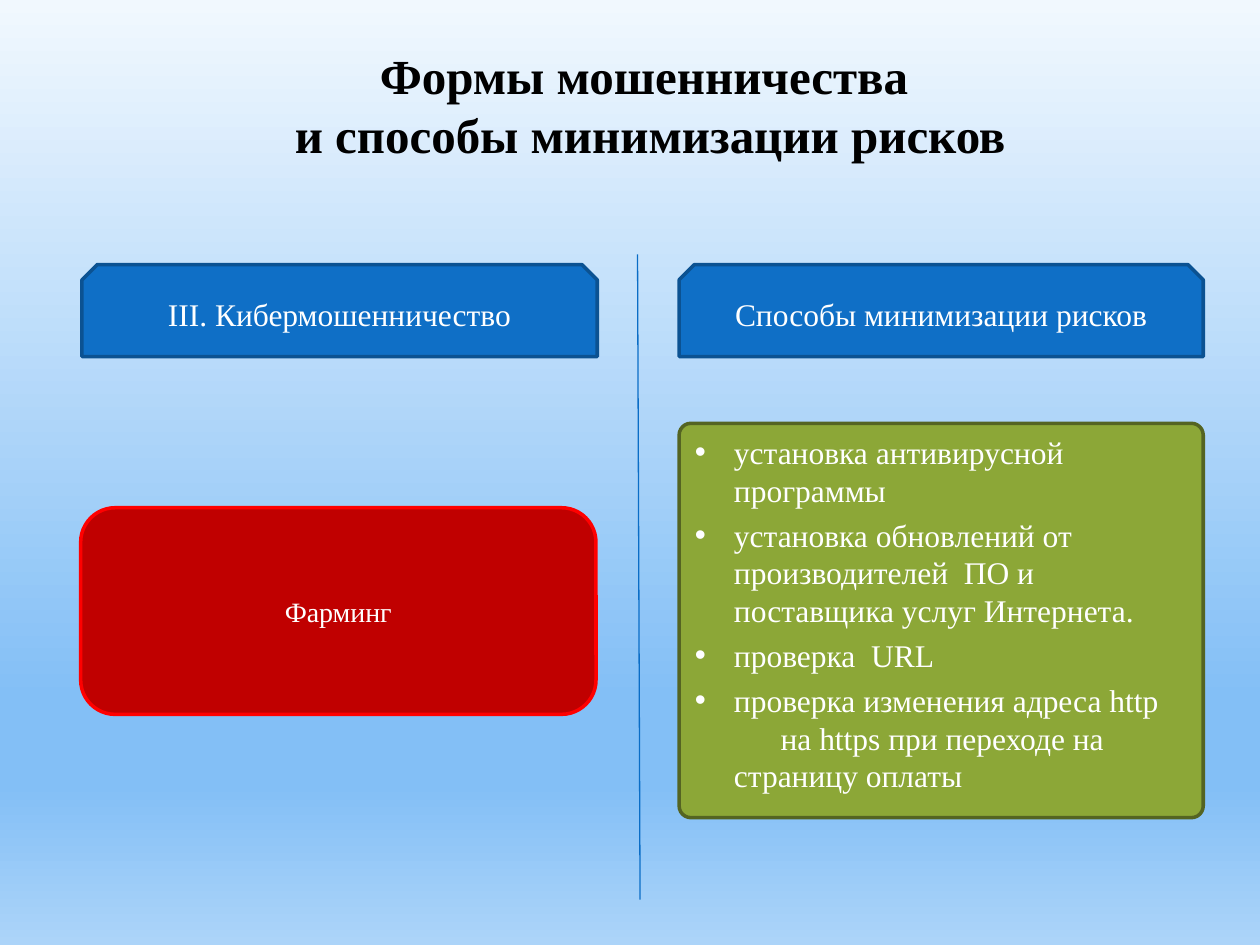
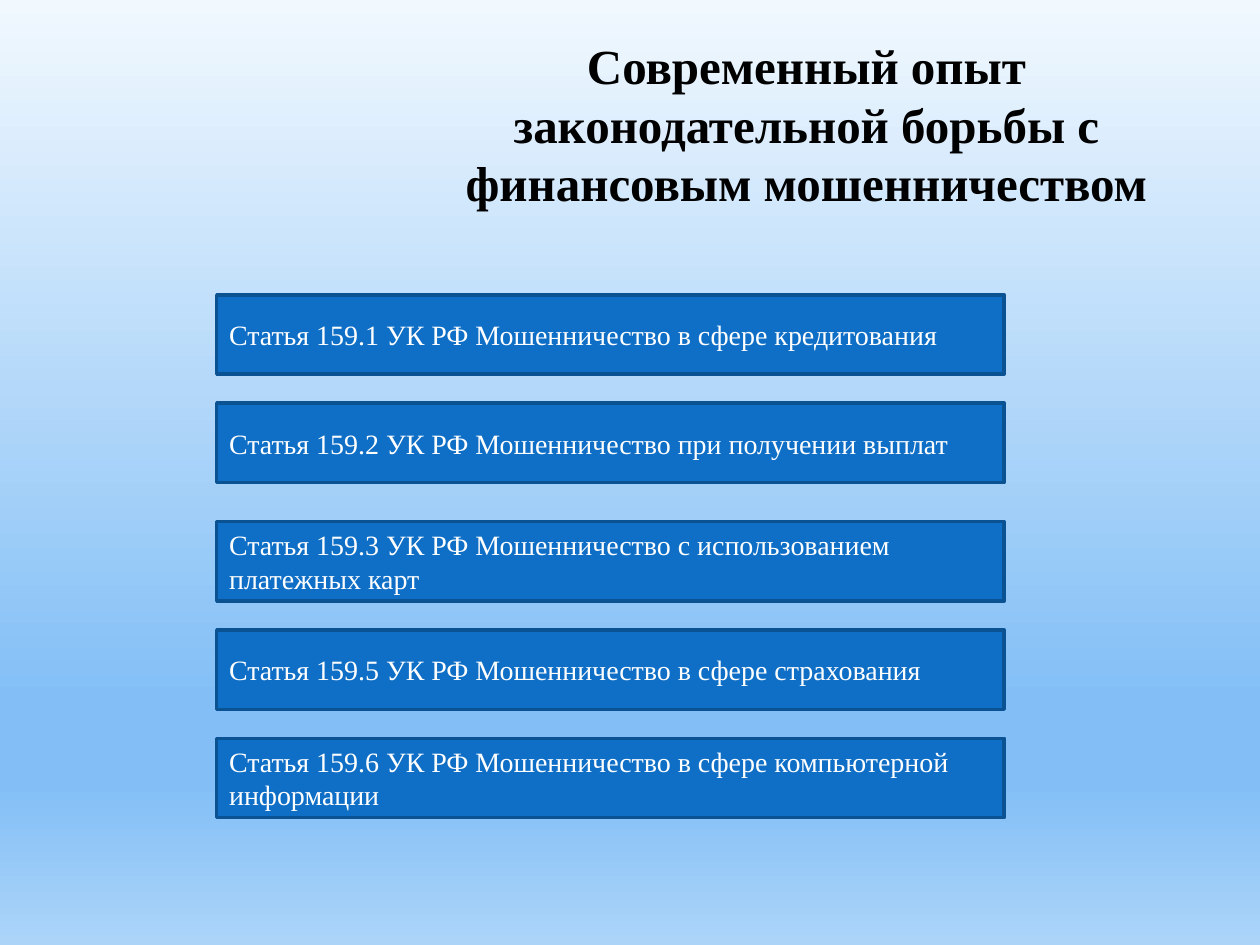
from lxml import etree
from pptx import Presentation
from pptx import util as u
from pptx.dml.color import RGBColor
from pptx.enum import shapes, text
from pptx.oxml.ns import qn

FORMS_TITLE = "Формы мошенничества \vи способы минимизации рисков"
HEADERS = [
    ("III. Кибермошенничество", 0.65, 4.09),
    ("Способы минимизации рисков", 5.39, 4.16),
]
THREAT = "Фарминг"
MEASURES = [
    "установка антивирусной программы",
    "установка обновлений от производителей  ПО и поставщика услуг Интернета.",
    "проверка  URL",
    "проверка изменения адреса http\v\tна https при переходе на страницу оплаты",
]
LAW_TITLE = "Современный опыт законодательной борьбы с финансовым мошенничеством"
ARTICLES = [
    ("159.1", "в сфере кредитования"),
    ("159.2", "при получении выплат"),
    ("159.3", "с использованием платежных карт"),
    ("159.5", "в сфере страхования"),
    ("159.6", "в сфере компьютерной информации"),
]
ARTICLE_TOP, ARTICLE_STEP, EXTRA_GAP = 2.34, 0.86, 0.08

FONT = "Times New Roman"
BLACK = RGBColor(0x00, 0x00, 0x00)
WHITE = RGBColor(0xFF, 0xFF, 0xFF)
BLUE = RGBColor(0x0F, 0x6F, 0xC6)
DARK_BLUE = RGBColor(0x0B, 0x52, 0x92)
DIVIDER = RGBColor(0x0A, 0x6D, 0xC6)
RED = RGBColor(0xC0, 0x00, 0x00)
BRIGHT_RED = RGBColor(0xFF, 0x00, 0x00)
GREEN = RGBColor(0x8C, 0xA7, 0x37)
DARK_GREEN = RGBColor(0x54, 0x64, 0x22)
PALE = RGBColor(0xF1, 0xF8, 0xFE)
SKY = RGBColor(0x83, 0xBF, 0xF6)
LIGHT_SKY = RGBColor(0xAC, 0xD4, 0xF9)
SKY_STOPS = [(0, PALE), (74, SKY), (83, SKY), (100, LIGHT_SKY)]

SHAPE = shapes.MSO_SHAPE
ALIGN = text.PP_ALIGN
ANCHOR = text.MSO_ANCHOR


def inches(*values):
    return [u.Inches(v) for v in values]


def write(p, content, size, color, align, bold=False):
    p.alignment = align
    for i, line in enumerate(content.split("\v")):
        if i:
            p.add_line_break()
        r = p.add_run()
        r.text = line
        r.font.name = FONT
        r.font.size = u.Pt(size)
        r.font.bold = bold
        r.font.color.rgb = color


def add_slide(prs, title, box):
    s = prs.slides.add_slide(prs.slide_layouts[6])
    s.background.fill.gradient()
    grad = s.element.find(".//" + qn("a:gradFill"))
    stops = grad.find(qn("a:gsLst"))
    for stop in list(stops):
        stops.remove(stop)
    for percent, color in SKY_STOPS:
        stop = etree.SubElement(stops, qn("a:gs"), pos=str(percent * 1000))
        etree.SubElement(stop, qn("a:srgbClr"), val=str(color))
    grad.find(qn("a:lin")).set("ang", "5400000")

    tf = s.shapes.add_textbox(*inches(*box)).text_frame
    tf.word_wrap = True
    write(tf.paragraphs[0], title, 28, BLACK, ALIGN.CENTER, bold=True)
    return s


def add_box(s, kind, box, fill, line):
    sp = s.shapes.add_shape(kind, *inches(*box))
    sp.shadow.inherit = False
    sp.fill.solid()
    sp.fill.fore_color.rgb = fill
    sp.line.color.rgb = line
    sp.line.width = u.Pt(2)
    tf = sp.text_frame
    tf.word_wrap = True
    tf.vertical_anchor = ANCHOR.MIDDLE
    return sp


def add_bullet(p):
    p.space_before = p.space_after = u.Pt(2)
    ppr = p._p.get_or_add_pPr()
    ppr.set("marL", str(u.Inches(0.31)))
    ppr.set("indent", str(u.Inches(-0.31)))
    etree.SubElement(ppr, qn("a:buFont"), typeface="Arial")
    etree.SubElement(ppr, qn("a:buChar"), char="•")
    tabs = etree.SubElement(ppr, qn("a:tabLst"))
    etree.SubElement(tabs, qn("a:tab"), pos=str(u.Inches(0.68)), algn="l")


def build_forms(prs):
    s = add_slide(prs, FORMS_TITLE, (1.41, 0.31, 7.5, 1.04))

    threat = add_box(s, SHAPE.ROUNDED_RECTANGLE, (0.64, 4.03, 4.09, 1.64), RED, BRIGHT_RED)
    write(threat.text_frame.paragraphs[0], THREAT, 16, WHITE, ALIGN.CENTER)

    for label, left, width in HEADERS:
        header = add_box(s, SHAPE.SNIP_2_SAME_RECTANGLE, (left, 2.1, width, 0.73), BLUE, DARK_BLUE)
        write(header.text_frame.paragraphs[0], label, 18, WHITE, ALIGN.CENTER)

    panel = add_box(s, SHAPE.ROUNDED_RECTANGLE, (5.39, 3.36, 4.16, 3.13), GREEN, DARK_GREEN)
    panel.adjustments[0] = 0.03
    tf = panel.text_frame
    tf.vertical_anchor = ANCHOR.TOP
    for i, measure in enumerate(MEASURES):
        p = tf.add_paragraph() if i else tf.paragraphs[0]
        add_bullet(p)
        write(p, measure, 18, WHITE, ALIGN.LEFT)

    divider = s.shapes.add_connector(shapes.MSO_CONNECTOR.STRAIGHT, *inches(5.06, 2.02, 5.08, 7.14))
    divider.line.color.rgb = DIVIDER
    divider.line.width = u.Pt(0.75)
    etree.SubElement(divider._element.spPr, qn("a:effectLst"))


def build_law(prs):
    s = add_slide(prs, LAW_TITLE, (3.03, 0.23, 6.74, 1.51))
    for i, (number, subject) in enumerate(ARTICLES):
        top = ARTICLE_TOP + i * ARTICLE_STEP + (EXTRA_GAP if i >= 2 else 0)
        article = add_box(s, SHAPE.RECTANGLE, (1.72, top, 6.25, 0.63), BLUE, DARK_BLUE)
        write(article.text_frame.paragraphs[0], f"Статья {number} УК РФ Мошенничество {subject}",
              16, WHITE, ALIGN.LEFT)


def main():
    prs = Presentation()
    prs.slide_width, prs.slide_height = inches(10, 7.5)
    build_forms(prs)
    build_law(prs)
    prs.save("out.pptx")


if __name__ == "__main__":
    main()
